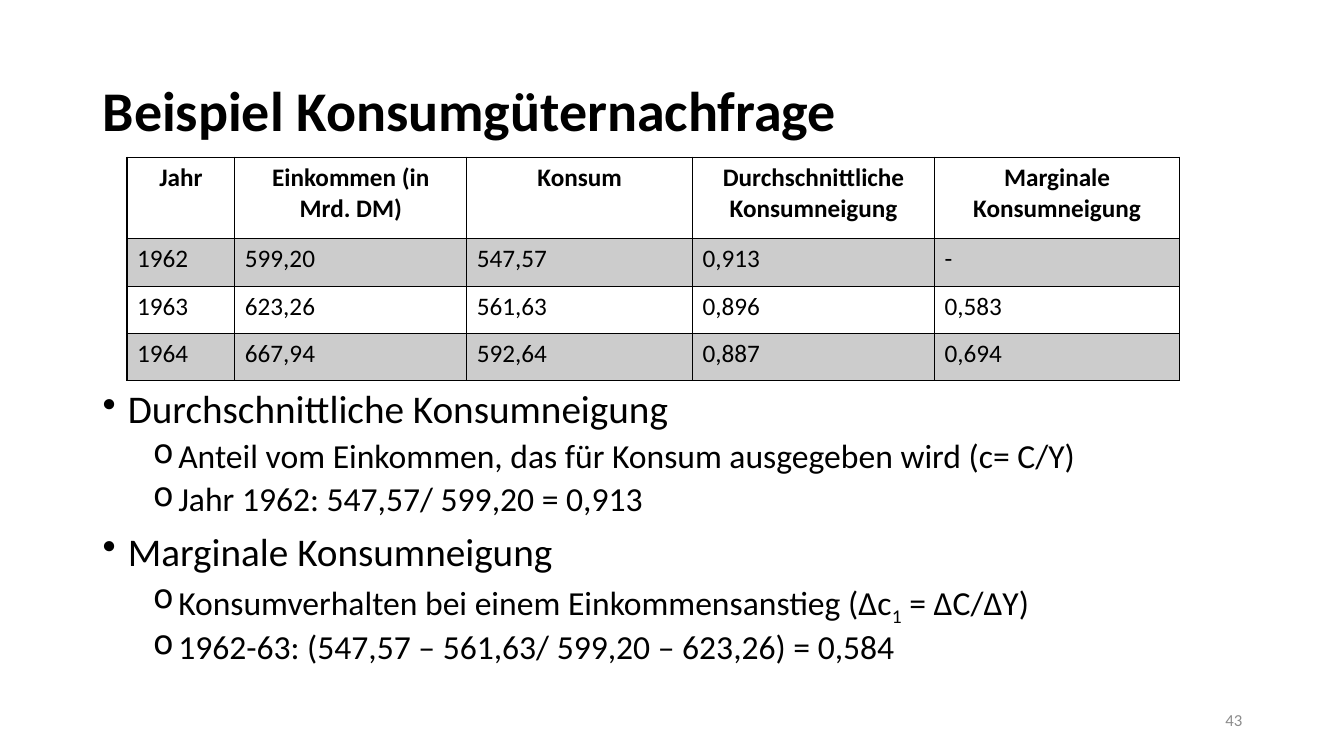
from lxml import etree
from pptx import Presentation, util as u
from pptx.dml.color import RGBColor
from pptx.enum import text
from pptx.oxml import ns

COLORS = {"ink": "000000", "page_number": "8C8C8C"}
HEADERS = ["Jahr", "Einkommen (in Mrd. DM)", "Konsum",
           "Durchschnittliche Konsumneigung", "Marginale Konsumneigung"]
YEARS = [
    ["1962", "599,20", "547,57", "0,913", "-"],
    ["1963", "623,26", "561,63", "0,896", "0,583"],
    ["1964", "667,94", "592,64", "0,887", "0,694"],
]
EXPLANATIONS = [
    (0, ["Durchschnittliche Konsumneigung"]),
    (1, ["Anteil vom Einkommen, das für Konsum ausgegeben wird (c= C/Y)"]),
    (1, ["Jahr 1962: 547,57/ 599,20 = 0,913"]),
    (0, ["Marginale Konsumneigung"]),
    (1, ["Konsumverhalten bei einem Einkommensanstieg (∆c", "1", " = ∆C/∆Y)"]),
    (1, ["1962-63: (547,57 – 561,63/ 599,20 – 623,26) = 0,584"]),
]


class SlideBuilder:
    """Holds the text style and the slide being filled."""

    font_name = "Calibri"

    def __init__(self, slide):
        self.slide = slide

    def style(self, paragraph, size, color="ink", bold=False):
        font = paragraph.font
        font.name, font.size, font.bold = self.font_name, u.Pt(size), bold
        font.color.rgb = RGBColor.from_string(COLORS[color])

    def text_frame(self, left, top, width, height, anchor):
        box = self.slide.shapes.add_textbox(*map(u.Inches, (left, top, width, height)))
        frame = box.text_frame
        frame.word_wrap = True
        frame.vertical_anchor = anchor
        return frame

    def label(self, position, words, size, color="ink", bold=False, align=text.PP_ALIGN.LEFT):
        paragraph = self.text_frame(*position, text.MSO_ANCHOR.MIDDLE).paragraphs[0]
        paragraph.text = words
        paragraph.alignment = align
        paragraph.line_spacing = 0.9
        self.style(paragraph, size, color, bold)

    def bullets(self, position, items):
        frame = self.text_frame(*position, text.MSO_ANCHOR.TOP)
        for index, (level, parts) in enumerate(items):
            paragraph = frame.add_paragraph() if index else frame.paragraphs[0]
            paragraph.level = level
            paragraph.line_spacing = 0.9
            paragraph.space_before = u.Pt((10, 5)[level] if index else 0)
            properties = paragraph._p.get_or_add_pPr()
            properties.set("marL", str(u.Inches(0.25 + 0.5 * level)))
            properties.set("indent", str(u.Inches(-0.25)))
            etree.SubElement(properties, ns.qn("a:buChar"), char="•o"[level])
            self.style(paragraph, (28, 24)[level])
            for part_index, part in enumerate(parts):
                run = paragraph.add_run()
                run.text = part
                if part_index == 1:
                    run._r.get_or_add_rPr().set("baseline", "-25000")

    def borders(self, cell):
        properties = cell._tc.get_or_add_tcPr()
        for side in "LRTB":
            line = etree.SubElement(properties, ns.qn(f"a:ln{side}"), w=str(u.Pt(1)))
            fill = etree.SubElement(line, ns.qn("a:solidFill"))
            etree.SubElement(fill, ns.qn("a:srgbClr"), val=COLORS["ink"])

    def shade(self, cell):
        cell.fill.solid()
        cell.fill.fore_color.rgb = RGBColor.from_string(COLORS["ink"])
        color = cell._tc.tcPr.find(ns.qn("a:solidFill")).find(ns.qn("a:srgbClr"))
        etree.SubElement(color, ns.qn("a:alpha"), val="20000")

    def table(self, left, top, widths, heights, rows):
        size = (sum(widths), sum(heights))
        frame = self.slide.shapes.add_table(
            len(rows), len(widths), *map(u.Inches, (left, top, *size)))
        table = frame.table
        table.first_row = table.horz_banding = False
        for column, width in zip(table.columns, widths):
            column.width = u.Inches(width)
        for row_index, (row, height, values) in enumerate(zip(table.rows, heights, rows)):
            row.height = u.Inches(height)
            is_header = row_index == 0
            for cell, value in zip(row.cells, values):
                cell.text = value
                paragraph = cell.text_frame.paragraphs[0]
                paragraph.alignment = text.PP_ALIGN.CENTER if is_header else text.PP_ALIGN.LEFT
                self.style(paragraph, 18, bold=is_header)
                self.borders(cell)
                if row_index % 2:
                    self.shade(cell)
                else:
                    cell.fill.background()


def main():
    presentation = Presentation()
    presentation.slide_width = u.Inches(13.33)
    presentation.slide_height = u.Inches(7.5)
    builder = SlideBuilder(presentation.slides.add_slide(presentation.slide_layouts[6]))
    builder.label((0.92, 0.4, 11.5, 1.45), "Beispiel Konsumgüternachfrage", 40, bold=True)
    builder.label((9.42, 6.95, 3, 0.4), "43", 12, "page_number", align=text.PP_ALIGN.RIGHT)
    builder.bullets((0.92, 3.82, 11.5, 3.13), EXPLANATIONS)
    builder.table(1.26, 1.56, [1.07, 2.3, 2.24, 2.4, 2.43],
                  [0.81] + [0.47] * len(YEARS), [HEADERS] + YEARS)
    presentation.save("out.pptx")


if __name__ == "__main__":
    main()
